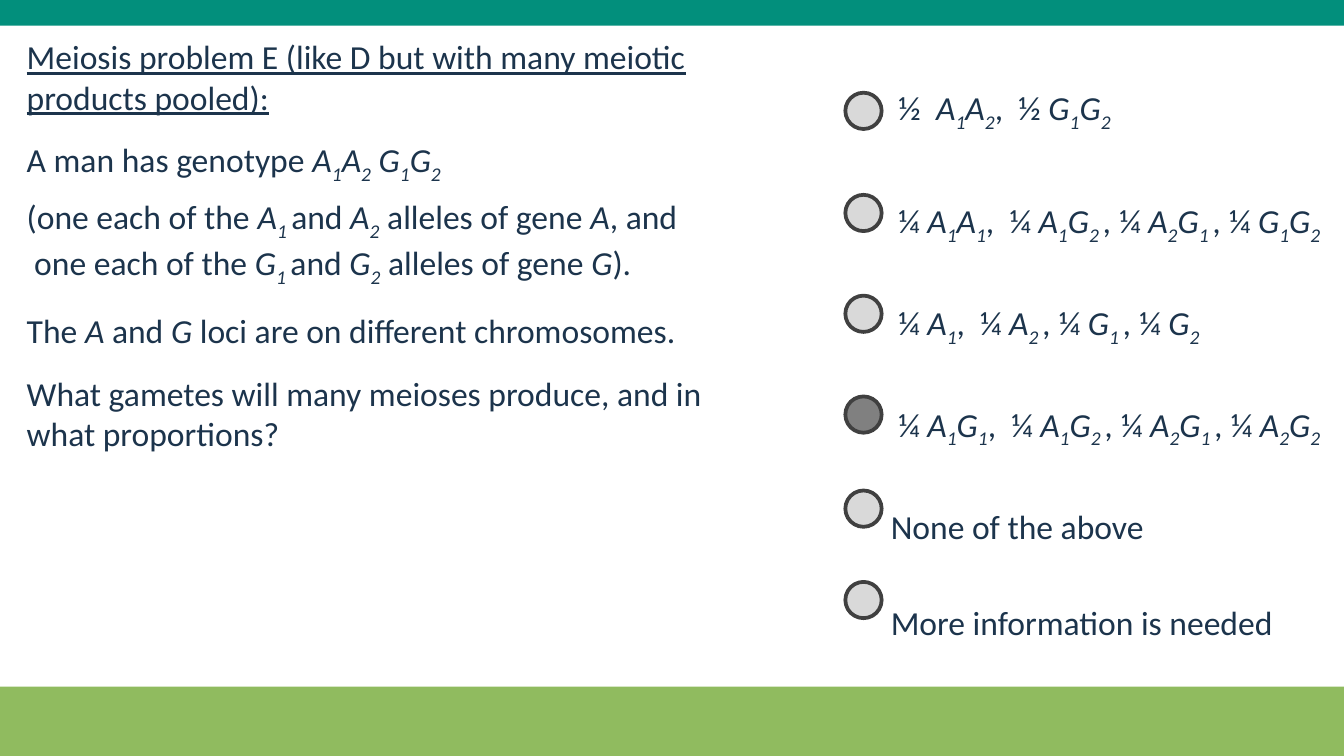
from pptx import Presentation
from pptx.dml.color import RGBColor
from pptx.enum.shapes import MSO_SHAPE
from pptx.enum.text import MSO_ANCHOR
from pptx.util import Inches, Pt

# Content: *...* is italic, _..._ is subscript; the number is space after in points
QUESTION = [
    ("Meiosis problem E (like D but with many meiotic products pooled):", 12),
    ("A man has genotype *A_1_A_2_ G_1_G_2_*", 6),
    ("(one each of the *A_1 _*and* A_2_* alleles of gene *A*, and", 0),
    (" one each of the *G_1 _*and* G_2_* alleles of gene *G*).", 12),
    ("The *A* and *G* loci are on different chromosomes.", 12),
    ("What gametes will many meioses produce, and in what proportions?", 0),
]
OPTIONS = [
    (" ½  *A_1_A_2_*,  ½ *G_1_G_2_*", 36),
    (" ¼ *A_1_A_1_*,  ¼ *A_1_G_2 _, *¼ *A_2_G_1 _,* ¼ *G_1_G_2_*", 30),
    (" ¼ *A_1_*,  ¼ *A_2 _, *¼ *G_1 _,* ¼ *G_2_*", 30),
    (" ¼ *A_1_G_1_*,  ¼ *A_1_G_2 _, *¼ *A_2_G_1 _,* ¼ *A_2_G_2_*", 30),
    ("None of the above", 30),
    ("More information is needed", 30),
]
BUTTON_TOPS = [0.69, 1.45, 2.2, 2.95, 3.65, 4.33]
CHOSEN = 3
BUTTON_LEFT, BUTTON_SIZE = 6.29, 0.27
BANDS = [(5.11, 0.53, "90BB5F"), (0, 0.19, "028F7C")]
WIDTH, HEIGHT = 10, 5.625
INK = "1C344C"


def color(value):
    return RGBColor.from_string(value)


def add_text(page, place, paragraphs, underline_first=False):
    box = page.shapes.add_textbox(*map(Inches, place))
    frame = box.text_frame
    frame.word_wrap = True
    frame.vertical_anchor = MSO_ANCHOR.TOP
    for index, (markup, space_after) in enumerate(paragraphs):
        para = frame.paragraphs[0] if index == 0 else frame.add_paragraph()
        para.space_after = Pt(space_after)
        for i, styled in enumerate(markup.split("*")):
            for j, words in enumerate(styled.split("_")):
                if not words:
                    continue
                span = para.add_run()
                span.text = words
                style = {"name": "Calibri", "size": Pt(18), "italic": i % 2 == 1,
                         "underline": underline_first and index == 0}
                for name, value in style.items():
                    setattr(span.font, name, value)
                span.font.color.rgb = color(INK)
                if j % 2:
                    span.font._element.set("baseline", "-25000")


def add_shape(page, kind, place, fill, line=None):
    shape = page.shapes.add_shape(kind, *map(Inches, place))
    shape.shadow.inherit = False
    shape.fill.solid()
    shape.fill.fore_color.rgb = color(fill)
    if line:
        shape.line.color.rgb = color(line)
        shape.line.width = Pt(2)
    else:
        shape.line.fill.background()


def main():
    deck = Presentation()
    deck.slide_width, deck.slide_height = Inches(WIDTH), Inches(HEIGHT)
    page = deck.slides.add_slide(deck.slide_layouts[6])

    # Question on the left
    add_text(page, (0.1, 0.22, 5.65, 3.11), QUESTION, underline_first=True)

    # Bands along the bottom and top
    for top, height, fill in BANDS:
        add_shape(page, MSO_SHAPE.RECTANGLE, (0, top, WIDTH, height), fill)

    # Answers on the right with their round buttons
    add_text(page, (6.53, 0.6, 3.5, 4.11), OPTIONS)
    for index, top in enumerate(BUTTON_TOPS):
        fill = "808080" if index == CHOSEN else "D9D9D9"
        add_shape(page, MSO_SHAPE.OVAL,
                  (BUTTON_LEFT, top, BUTTON_SIZE, BUTTON_SIZE), fill, "404040")

    deck.save("out.pptx")


if __name__ == "__main__":
    main()
